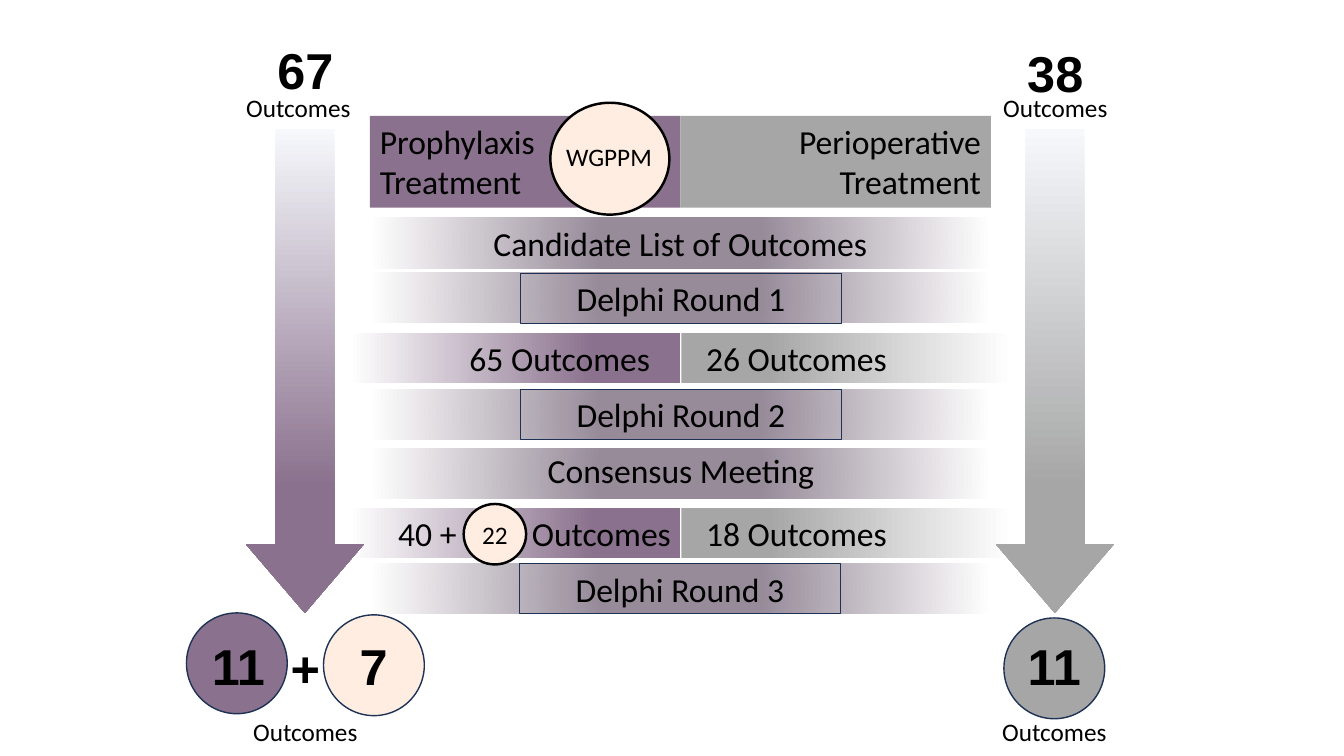
"""Build the slide showing how two outcome lists narrow through three Delphi rounds."""
from dataclasses import dataclass
from typing import Optional, Union

from lxml.etree import SubElement
from pptx import Presentation
from pptx.dml.color import RGBColor
from pptx.enum.shapes import MSO_SHAPE
from pptx.enum.text import MSO_ANCHOR, PP_ALIGN
from pptx.oxml.ns import qn
from pptx.util import Pt


@dataclass(frozen=True)
class TextStyle:
    font: str
    size: float
    bold: bool = False


@dataclass(frozen=True)
class Theme:
    purple: str = "8A718D"
    gray: str = "A6A6A6"
    mauve: str = "978B99"
    cream: str = "FFEDE1"
    white: str = "FFFFFF"
    pale: str = "F6F8FC"
    navy: str = "1E3256"
    black: str = "000000"
    stage: TextStyle = TextStyle("Calibri", 24)
    caption: TextStyle = TextStyle("Calibri", 18)
    count: TextStyle = TextStyle("Arial", 36, True)


@dataclass(frozen=True)
class Gradient:
    stops: tuple[tuple[int, str], ...]
    angle: Optional[int] = None


@dataclass(frozen=True)
class Outline:
    color: str
    width: float


@dataclass(frozen=True)
class Item:
    left: float
    top: float
    width: float
    height: float
    text: str = ""
    style: TextStyle = Theme.stage
    align: PP_ALIGN = PP_ALIGN.CENTER
    kind: Optional[MSO_SHAPE] = None
    fill: Union[str, Gradient, None] = None
    outline: Optional[Outline] = None
    inset_left: float = 7.2
    inset_right: float = 7.2
    tab: Optional[float] = None


THEME = Theme()
RECT, OVAL, ARROW = MSO_SHAPE.RECTANGLE, MSO_SHAPE.OVAL, MSO_SHAPE.DOWN_ARROW
LEFT, RIGHT = PP_ALIGN.LEFT, PP_ALIGN.RIGHT
THIN = Outline(THEME.navy, 0.75)
RING = Outline(THEME.navy, 1)
BADGE_RING = Outline(THEME.black, 1.75)


def fade_in(start: str, end: str, angle: int) -> Gradient:
    """Return a gradient that settles on its end colour."""
    return Gradient(((0, start), (74, end), (83, end), (100, end)), angle)


def fade_out(start: str, angle: Optional[int] = None) -> Gradient:
    """Return a gradient that leaves its start colour for white."""
    return Gradient(((0, start), (17, start), (26, start), (100, THEME.white)), angle)


def apply_gradient(shape, gradient: Gradient) -> None:
    """Fill a shape with a linear or centred gradient."""
    shape.fill.gradient()
    element = shape.element.spPr.find(qn("a:gradFill"))
    for child in list(element):
        element.remove(child)
    stops = SubElement(element, qn("a:gsLst"))
    for position, color in gradient.stops:
        stop = SubElement(stops, qn("a:gs"), pos=str(position * 1000))
        SubElement(stop, qn("a:srgbClr"), val=color)
    if gradient.angle is None:
        center = SubElement(element, qn("a:path"), path="circle")
        SubElement(center, qn("a:fillToRect"), l="50000", t="50000", r="50000", b="50000")
    else:
        SubElement(element, qn("a:lin"), ang=str(gradient.angle * 60000), scaled="1")


def write_text(shape, item: Item) -> None:
    """Set and format the text of an item."""
    frame = shape.text_frame
    frame.word_wrap = True
    frame.vertical_anchor = MSO_ANCHOR.TOP
    frame.margin_left, frame.margin_right = Pt(item.inset_left), Pt(item.inset_right)
    frame.text = item.text
    para = frame.paragraphs[0]
    para.alignment = item.align
    if item.tab is not None:
        tabs = SubElement(para._p.get_or_add_pPr(), qn("a:tabLst"))
        SubElement(tabs, qn("a:tab"), pos=str(Pt(item.tab)), algn="l")
    for span in para.runs:
        span.font.name = item.style.font
        span.font.size = Pt(item.style.size)
        span.font.bold = item.style.bold
        span.font.color.rgb = RGBColor.from_string(THEME.black)


def draw(shapes, item: Item) -> None:
    """Draw one item into a slide or a group."""
    bounds = [Pt(length) for length in (item.left, item.top, item.width, item.height)]
    if item.kind is None:
        shape = shapes.add_textbox(*bounds)
    else:
        shape = shapes.add_shape(item.kind, *bounds)
        shape.shadow.inherit = False
        if isinstance(item.fill, Gradient):
            apply_gradient(shape, item.fill)
        elif item.fill:
            shape.fill.solid()
            shape.fill.fore_color.rgb = RGBColor.from_string(item.fill)
        else:
            shape.fill.background()
        if item.outline:
            shape.line.color.rgb = RGBColor.from_string(item.outline.color)
            shape.line.width = Pt(item.outline.width)
        else:
            shape.line.fill.background()
        if item.kind == ARROW:
            shape.adjustments[0], shape.adjustments[1] = 0.5, 0.583
    if item.text:
        write_text(shape, item)


def band(top: float, text: str = "") -> Item:
    """Describe a full-width stage band."""
    return Item(264.2, top, 443.5, 36, text, kind=RECT, fill=fade_out(THEME.mauve))


def purple_half(top: float, text: str, align: PP_ALIGN, **layout: float) -> Item:
    """Describe the prophylaxis half of a result row."""
    return Item(249.8, top, 236.2, 36, text, align=align, kind=RECT,
                fill=fade_in(THEME.white, THEME.purple, 0), **layout)


def gray_half(top: float, text: str) -> Item:
    """Describe the perioperative half of a result row."""
    return Item(486.7, top, 236.2, 36, text, align=LEFT, kind=RECT,
                fill=fade_out(THEME.gray, 0), inset_left=17.6)


def header(left: float, text: str, color: str, align: PP_ALIGN) -> Item:
    """Describe a treatment heading."""
    return Item(left, 82.8, 221.8, 65.5, text, align=align, kind=RECT, fill=color)


def disc(left: float, top: float, color: str) -> Item:
    """Describe a final result circle."""
    return Item(left, top, 72, 72, kind=OVAL, fill=color, outline=RING)


def frame_box(left: float, top: float, number: int) -> Item:
    """Describe the outlined name of a Delphi round."""
    return Item(left, top, 229.7, 36, f"Delphi Round {number}", kind=RECT, outline=THIN)


def caption(left: float, top: float) -> Item:
    """Describe the word under a count."""
    return Item(left, top, 95, 28.8, "Outcomes", THEME.caption)


def count(left: float, top: float, width: float, text: str) -> Item:
    """Describe a large bold count."""
    return Item(left, top, width, 51.1, text, THEME.count)


def arrow(left: float, color: str) -> Item:
    """Describe a tall arrow down one side."""
    return Item(left, 92.2, 84.2, 345.6, kind=ARROW, fill=fade_in(THEME.pale, color, 90))


def badge(left: float, top: float, width: float, height: float, label: Item) -> list[Item]:
    """Describe a cream circle with its label."""
    return [Item(left, top, width, height, kind=OVAL, fill=THEME.cream, outline=BADGE_RING), label]


ITEMS: list[Union[Item, list[Item]]] = [
    disc(717.1, 441.4, THEME.gray), disc(133.2, 437.8, THEME.purple), disc(231.1, 439.2, THEME.cream),
    *[band(top) for top in (402.5, 320.4, 277.9, 194.4)],
    header(264.2, "Prophylaxis Treatment", THEME.purple, LEFT),
    header(486, "Perioperative Treatment", THEME.gray, RIGHT),
    band(155.5, "Candidate List of Outcomes"),
    purple_half(237.6, "65 Outcomes", RIGHT, inset_right=21.6), gray_half(237.6, "26 Outcomes"),
    purple_half(362.9, "40 +\tOutcomes", LEFT, inset_left=34.6, inset_right=0, tab=95.5),
    gray_half(362.9, "18 Outcomes"),
    caption(165.6, 62.6), caption(706.3, 62.6),
    count(182.2, 24.5, 72, "67"), count(717.8, 26.6, 72, "38"),
    frame_box(370.8, 402.5, 3), frame_box(371.5, 277.9, 2), frame_box(371.5, 195.1, 1),
    Item(371.5, 318.2, 229.7, 36, "Consensus Meeting"),
    count(236.2, 450, 61.2, "7"), count(717.1, 450, 72, "11"),
    caption(170.6, 508.3), caption(705.6, 508.3),
    badge(393.1, 73.4, 85, 79.9, Item(397.4, 97.2, 90.7, 33.1, "WGPPM", THEME.caption, LEFT)),
    count(139, 450, 62.6, "11"), count(198, 451.4, 40.3, "+"),
    arrow(711.4, THEME.gray), arrow(175.7, THEME.purple),
    badge(331.2, 360, 44.6, 43.2, Item(329.8, 367.2, 47.5, 25.2, "22", THEME.caption)),
]


def main() -> None:
    """Build and save the deck."""
    deck = Presentation()
    deck.slide_width, deck.slide_height = Pt(960), Pt(540)
    page = deck.slides.add_slide(deck.slide_layouts[6])
    for item in ITEMS:
        if isinstance(item, list):
            group = page.shapes.add_group_shape()
            for part in item:
                draw(group.shapes, part)
        else:
            draw(page.shapes, item)
    deck.save("out.pptx")


if __name__ == "__main__":
    main()
